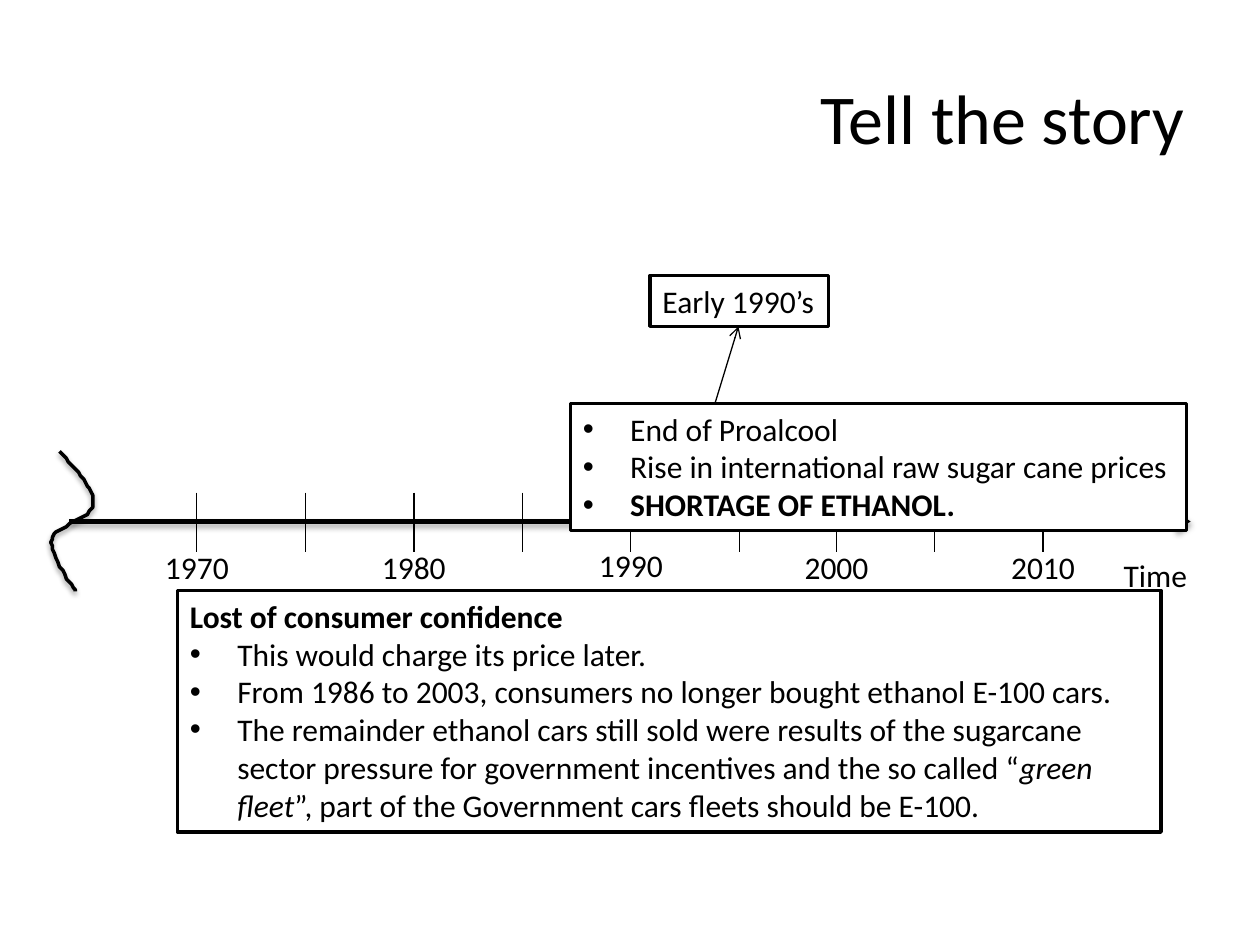
"""Build the slide that tells the story of ethanol on a timeline."""
from lxml.etree import SubElement
from pptx import Presentation
from pptx.dml.color import RGBColor
from pptx.enum.shapes import MSO_CONNECTOR, MSO_SHAPE
from pptx.enum.text import MSO_ANCHOR, MSO_AUTO_SIZE, PP_ALIGN
from pptx.oxml.ns import qn
from pptx.util import Pt

COLORS = {"ink": "000000", "paper": "FFFFFF"}
BODY = {"name": "Calibri", "size": Pt(18)}
HEADING = {"name": "Calibri", "size": Pt(40)}
BOLD, ITALIC, BULLET_INDENT = {"bold": True}, {"italic": True}, 27

TITLE = [(False, [("Tell the story", {})])]
PERIOD = [(False, [("Early 1990’s", {})])]
EVENTS = [
    (True, [("End of Proalcool", {})]),
    (True, [("Rise in international raw sugar cane prices", {})]),
    (True, [("SHORTAGE OF ETHANOL.", BOLD)]),
]
CONSEQUENCES = [
    (False, [("Lost of consumer confidence", BOLD)]),
    (True, [("This would charge its price later.", {})]),
    (True, [("From 1986 to 2003, consumers no longer bought ethanol E-100 cars.", {})]),
    (True, [
        ("The remainder ethanol cars still sold were results of the sugarcane "
         "sector pressure for government incentives and the so called “", {}),
        ("green fleet", ITALIC),
        ("”, part of the Government cars fleets should be E-100.", {}),
    ]),
]

AXIS_Y, TICK_TOP, TICK_BOTTOM = 298, 281.5, 315.5
TICKS = [112.5 + 62 * step for step in range(6)] + [478, 534, 596]
YEARS = [("1970", 0, 309.6), ("1980", 2, 309.6), ("1990", 4, 308.2),
         ("2000", 6, 309.6), ("2010", 8, 309.6)]
YEAR_WIDTH, LABEL_HEIGHT = 56, 29
BREAK_CURVES = [
    [(33.8, 257.8), (43.9, 268.6), (54, 279.4), (53.3, 288)],
    [(53.3, 288), (52.6, 296.6), (31.7, 300.2), (29.5, 308.2)],
    [(29.5, 308.2), (28.1, 316.8), (43.2, 337.7), (43.2, 337.7)],
]
CURVE_STEPS = 16


def color(key):
    return RGBColor.from_string(COLORS[key])


def apply(target, values):
    for attribute, value in values.items():
        setattr(target, attribute, value)


def stroke(line, width):
    line.color.rgb = color("ink")
    line.width = Pt(width)


def add_shadow(effects, opacity):
    shadow = SubElement(effects, qn("a:outerShdw"), blurRad=str(Pt(3.1)),
                        dist=str(Pt(1.7)), dir="5400000", rotWithShape="0")
    ink = SubElement(shadow, qn("a:srgbClr"), val=COLORS["ink"])
    SubElement(ink, qn("a:alpha"), val=str(opacity * 1000))


def add_line(slide, start, end, width, arrow=False):
    line = slide.shapes.add_connector(
        MSO_CONNECTOR.STRAIGHT, *(Pt(value) for value in start + end))
    stroke(line.line, width)
    if arrow:
        SubElement(line.line._get_or_add_ln(), qn("a:tailEnd"), type="arrow")
    return SubElement(line._element.spPr, qn("a:effectLst"))


def write(shape, paragraphs, font=BODY, align=PP_ALIGN.LEFT, **frame):
    text = shape.text_frame
    apply(text, {"word_wrap": True, "auto_size": MSO_AUTO_SIZE.SHAPE_TO_FIT_TEXT,
                 "vertical_anchor": MSO_ANCHOR.TOP} | frame)
    for index, (bulleted, runs) in enumerate(paragraphs):
        paragraph = text.add_paragraph() if index else text.paragraphs[0]
        paragraph.alignment = align
        if bulleted:
            properties = paragraph._p.get_or_add_pPr()
            properties.set("marL", str(Pt(BULLET_INDENT)))
            properties.set("indent", str(-Pt(BULLET_INDENT)))
            SubElement(properties, qn("a:buFont"), typeface="Arial")
            SubElement(properties, qn("a:buChar"), char="•")
        for words, emphasis in runs:
            run = paragraph.add_run()
            run.text = words
            apply(run.font, font | emphasis)
            run.font.color.rgb = color("ink")


def add_label(slide, place, paragraphs, **style):
    write(slide.shapes.add_textbox(*map(Pt, place)), paragraphs, **style)


def add_card(slide, place, paragraphs, **style):
    card = slide.shapes.add_shape(MSO_SHAPE.RECTANGLE, *map(Pt, place))
    card.fill.solid()
    card.fill.fore_color.rgb = color("paper")
    stroke(card.line, 2)
    card.shadow.inherit = False
    write(card, paragraphs, **style)


def bezier(a, b, c, d, t):
    s = 1 - t
    return tuple(s**3 * p + 3 * s * s * t * q + 3 * s * t * t * r + t**3 * u
                 for p, q, r, u in zip(a, b, c, d))


def add_axis_break(slide):
    points = [bezier(*curve, step / CURVE_STEPS)
              for curve in BREAK_CURVES for step in range(1, CURVE_STEPS + 1)]
    builder = slide.shapes.build_freeform(*BREAK_CURVES[0][0], scale=Pt(1))
    builder.add_line_segments(points, close=False)
    wave = builder.convert_to_shape()
    wave.fill.background()
    stroke(wave.line, 2)
    wave.shadow.inherit = False
    add_shadow(wave._element.spPr.find(qn("a:effectLst")), 38)


def main():
    presentation = Presentation()
    apply(presentation, {"slide_width": Pt(720), "slide_height": Pt(540)})
    slide = presentation.slides.add_slide(presentation.slide_layouts[6])

    add_label(slide, (36, 21.6, 648, 90), TITLE, font=HEADING, align=PP_ALIGN.RIGHT,
              vertical_anchor=MSO_ANCHOR.MIDDLE, auto_size=MSO_AUTO_SIZE.NONE)
    add_shadow(add_line(slide, (39.6, AXIS_Y), (680.4, AXIS_Y), 3, arrow=True), 35)
    add_label(slide, (635, 314, 51, LABEL_HEIGHT), [(False, [("Time", {})])],
              word_wrap=False)
    add_axis_break(slide)
    for x in TICKS:
        add_line(slide, (x, TICK_TOP), (x, TICK_BOTTOM), 0.75)
    for year, tick, top in YEARS:
        add_label(slide, (TICKS[tick] - YEAR_WIDTH / 2, top, YEAR_WIDTH, LABEL_HEIGHT),
                  [(False, [(year, {})])], align=PP_ALIGN.CENTER)

    add_card(slide, (371.5, 157.5, 102, LABEL_HEIGHT), PERIOD, word_wrap=False)
    add_line(slide, (388, AXIS_Y), (422, 186.5), 0.75, arrow=True)
    add_card(slide, (326, 230.5, 352, 72.7), EVENTS, word_wrap=False)
    add_card(slide, (101.5, 337.5, 562, 138), CONSEQUENCES)
    presentation.save("out.pptx")


if __name__ == "__main__":
    main()
